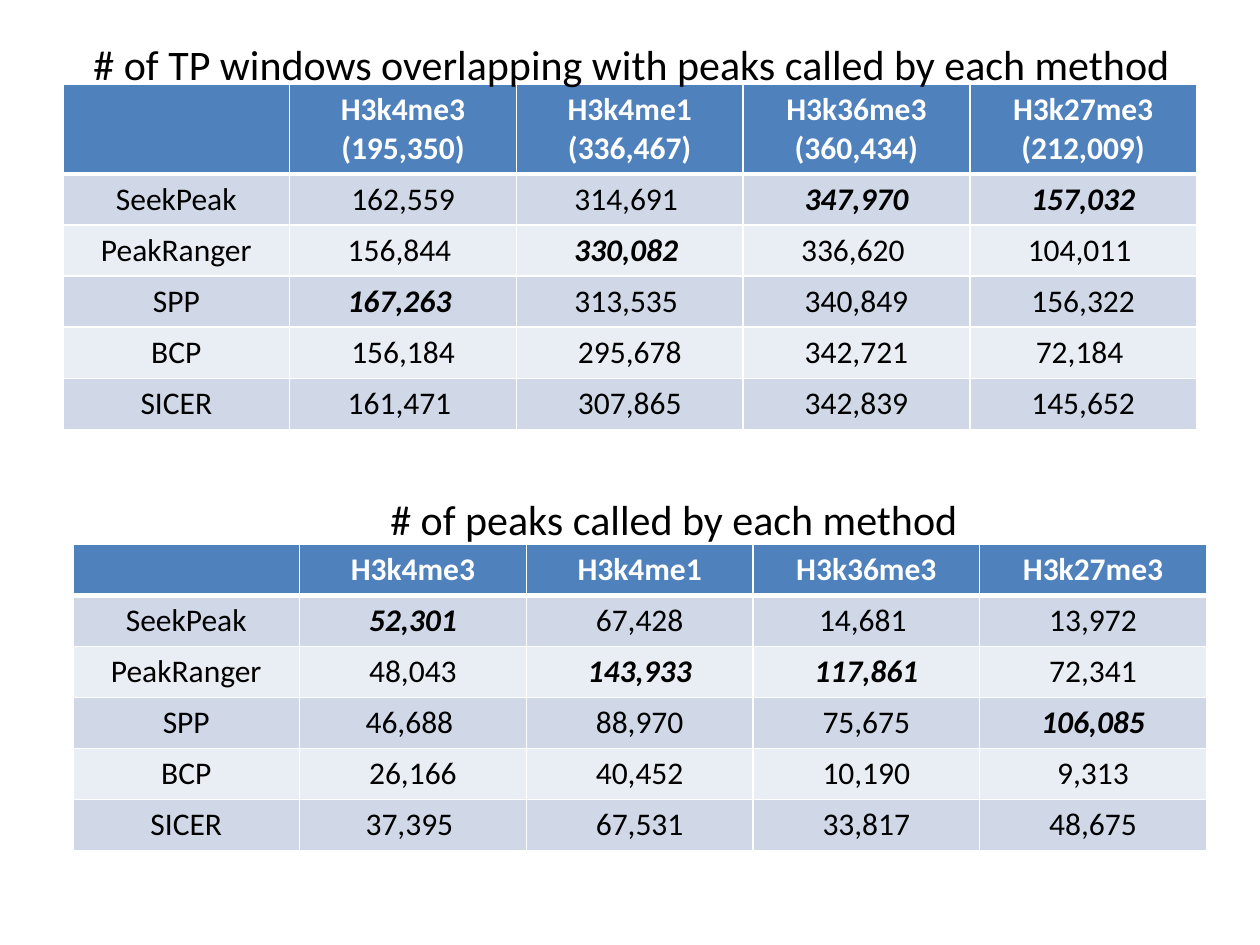
import dataclasses
import pptx
import pptx.dml.color
import pptx.enum.text
import pptx.oxml
import pptx.oxml.ns
import pptx.util
from pptx.dml.color import RGBColor
from pptx.util import Cm, Pt

FONT = "Calibri"
WHITE = RGBColor(0xFF, 0xFF, 0xFF)
BLACK = RGBColor(0x00, 0x00, 0x00)
HEADER_BLUE = RGBColor(0x4F, 0x81, 0xBD)
BAND_COLORS = (RGBColor(0xD0, 0xD8, 0xE8), RGBColor(0xE9, 0xED, 0xF4))

COLUMN_WIDTH = Cm(4.57)
ROW_HEIGHT = Cm(1.03)
TITLE_LAYOUT = 5


@dataclasses.dataclass
class Caption:
    text: str
    left: float
    top: float
    width: float
    height: float = 1.27


@dataclasses.dataclass
class MethodTable:
    """Rows of counts by method; best lists the (row, column) cells to stress."""
    left: float
    top: float
    header_height: float
    header_anchor: pptx.enum.text.MSO_ANCHOR
    rows: list[tuple[str, ...]]
    best: set[tuple[int, int]]


OVERLAP_CAPTION = Caption(
    "# of TP windows overlapping with peaks called by each method", 1.63, 0.64, 22.56)
PEAKS_CAPTION = Caption("# of peaks called by each method", 7.62, 9.83, 12.07)

OVERLAP_TABLE = MethodTable(
    1.27, 1.7, 1.75, pptx.enum.text.MSO_ANCHOR.TOP,
    [
        ("", "H3k4me3\n(195,350)", "H3k4me1 (336,467)",
         "H3k36me3\n(360,434)", "H3k27me3\n(212,009)"),
        ("SeekPeak", "162,559", "314,691 ", "347,970", "157,032"),
        ("PeakRanger", "156,844 ", "330,082 ", "336,620 ", "104,011 "),
        ("SPP", "167,263 ", "313,535 ", "340,849", "156,322"),
        ("BCP", "156,184", "295,678", "342,721", "72,184 "),
        ("SICER", "161,471 ", "307,865", "342,839", "145,652"),
    ],
    {(1, 3), (1, 4), (2, 2), (3, 1)},
)
PEAKS_TABLE = MethodTable(
    1.47, 10.97, 1.03, pptx.enum.text.MSO_ANCHOR.MIDDLE,
    [
        ("", "H3k4me3", "H3k4me1", "H3k36me3", "H3k27me3"),
        ("SeekPeak", "52,301", "67,428", "14,681 ", "13,972"),
        ("PeakRanger", "48,043", "143,933", "117,861", "72,341"),
        ("SPP", "46,688 ", "88,970", "75,675", "106,085"),
        ("BCP", "26,166", "40,452", "10,190", "9,313"),
        ("SICER", "37,395 ", "67,531", "33,817", "48,675"),
    ],
    {(1, 1), (2, 2), (2, 3), (3, 4)},
)


def add_run(paragraph, text: str, size: int, color: RGBColor,
            bold: bool = False, italic: bool = False) -> None:
    run = paragraph.add_run()
    run.text = text
    run.font.name = FONT
    run.font.size = Pt(size)
    run.font.color.rgb = color
    run.font.bold = bold
    run.font.italic = italic


def set_borders(cell, bottom_points: int, top_points: int) -> None:
    """Put white lines round a cell, ahead of its fill as the schema asks."""
    properties = cell._tc.get_or_add_tcPr()
    widths = {"lnL": 1, "lnR": 1, "lnT": top_points, "lnB": bottom_points}
    for index, (side, points) in enumerate(widths.items()):
        line = pptx.oxml.parse_xml(
            f'<a:{side} {pptx.oxml.ns.nsdecls("a")} w="{Pt(points)}">'
            f'<a:solidFill><a:srgbClr val="{WHITE}"/></a:solidFill></a:{side}>')
        properties.insert(index, line)


def add_method_table(slide, data: MethodTable) -> None:
    row_count, column_count = len(data.rows), len(data.rows[0])
    header_height = Cm(data.header_height)
    table = slide.shapes.add_table(
        row_count, column_count, Cm(data.left), Cm(data.top),
        COLUMN_WIDTH * column_count,
        header_height + ROW_HEIGHT * (row_count - 1)).table
    for column in table.columns:
        column.width = COLUMN_WIDTH
    for row_index, texts in enumerate(data.rows):
        is_header = row_index == 0
        table.rows[row_index].height = header_height if is_header else ROW_HEIGHT
        for column_index, text in enumerate(texts):
            cell = table.cell(row_index, column_index)
            cell.fill.solid()
            cell.fill.fore_color.rgb = (
                HEADER_BLUE if is_header else BAND_COLORS[(row_index - 1) % 2])
            set_borders(cell, bottom_points=3 if is_header else 1,
                        top_points=3 if row_index == 1 else 1)
            if is_header:
                cell.vertical_anchor = data.header_anchor
            if not text:
                continue
            is_best = (row_index, column_index) in data.best
            frame = cell.text_frame
            for line_index, line in enumerate(text.split("\n")):
                paragraph = frame.add_paragraph() if line_index else frame.paragraphs[0]
                paragraph.alignment = pptx.enum.text.PP_ALIGN.CENTER
                add_run(paragraph, line, 18, WHITE if is_header else BLACK,
                        bold=is_header or is_best, italic=is_best)


def format_caption(shape, caption: Caption) -> None:
    shape.left, shape.top = Cm(caption.left), Cm(caption.top)
    shape.width, shape.height = Cm(caption.width), Cm(caption.height)
    frame = shape.text_frame
    frame.word_wrap = False
    frame.auto_size = pptx.enum.text.MSO_AUTO_SIZE.SHAPE_TO_FIT_TEXT
    frame.vertical_anchor = pptx.enum.text.MSO_ANCHOR.TOP
    paragraph = frame.paragraphs[0]
    paragraph.alignment = pptx.enum.text.PP_ALIGN.LEFT
    add_run(paragraph, caption.text, 24, BLACK)


def main() -> None:
    presentation = pptx.Presentation()
    presentation.slide_width = Cm(25.4)
    presentation.slide_height = Cm(19.05)
    slide = presentation.slides.add_slide(presentation.slide_layouts[TITLE_LAYOUT])

    for data in (OVERLAP_TABLE, PEAKS_TABLE):
        add_method_table(slide, data)

    title = slide.shapes.title
    format_caption(title, OVERLAP_CAPTION)
    # The title overlaps its table, so it goes in front.
    slide.shapes._spTree.append(title._element)
    format_caption(slide.shapes.add_textbox(0, 0, 0, 0), PEAKS_CAPTION)

    presentation.save("out.pptx")


if __name__ == "__main__":
    main()
